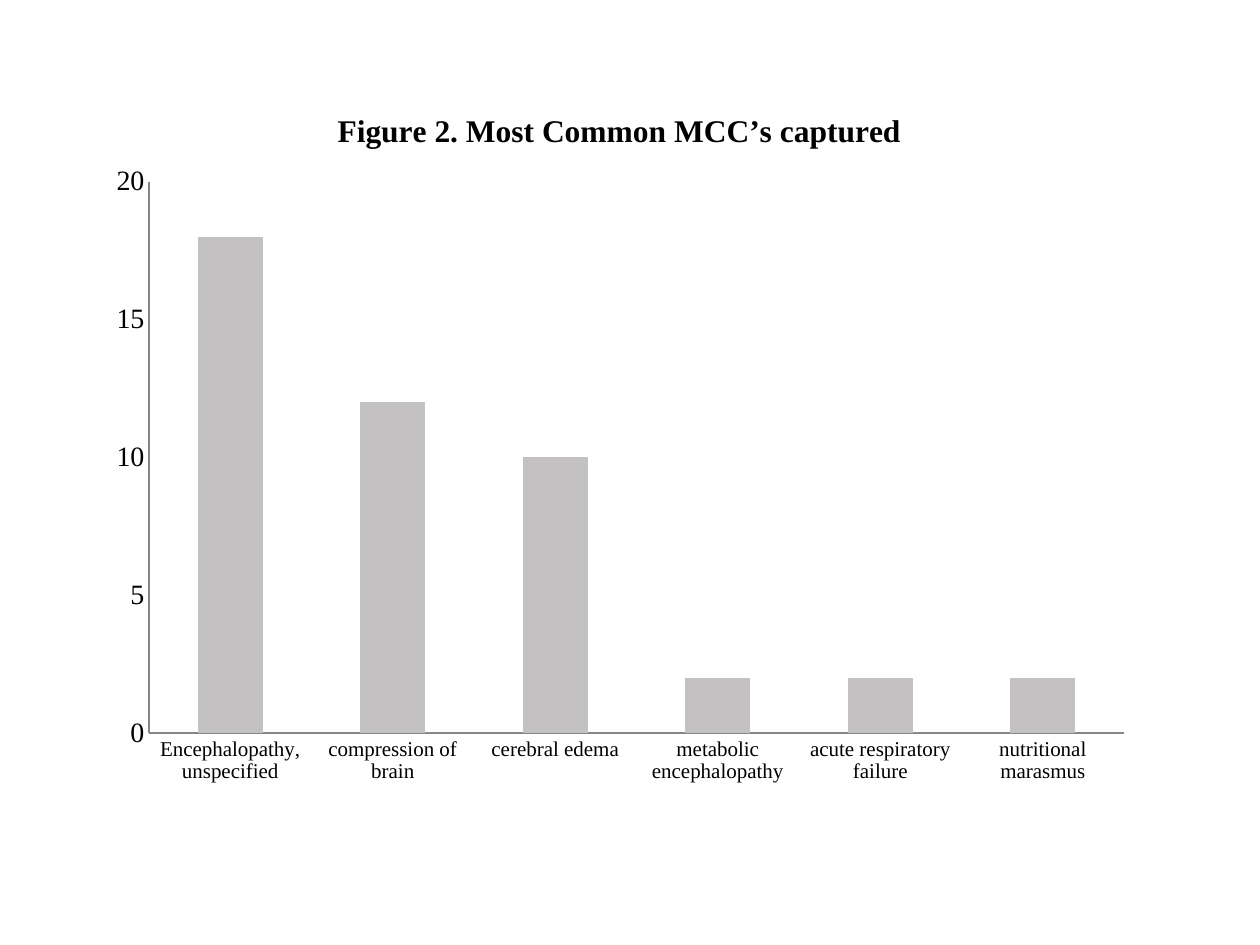
import pptx
import pptx.chart.data
import pptx.dml.color
import pptx.enum.chart
import pptx.oxml
import pptx.oxml.ns
import pptx.util

Inches, Pt = pptx.util.Inches, pptx.util.Pt
RGBColor = pptx.dml.color.RGBColor
enums = pptx.enum.chart

# Content
TITLE = "Figure 2. Most Common MCC’s captured"
COUNTS = {
    "Encephalopathy, unspecified": 18,
    "compression of brain": 12,
    "cerebral edema": 10,
    "metabolic encephalopathy": 2,
    "acute respiratory failure": 2,
    "nutritional marasmus": 2,
}
BLACK = RGBColor(0x00, 0x00, 0x00)
GREY = RGBColor(0xC3, 0xC1, 0xC1)
AXIS = RGBColor(0x86, 0x86, 0x86)
FONT = "Times New Roman"
LEFT, TOP, WIDTH, HEIGHT = 0.75, 0.67, 8.33, 5.67
PLOT = {"x": 1.18, "y": 1.44, "w": 7.74, "h": 4.38}  # inches on the slide


def style(font, size, name=FONT, bold=False):
    font.name, font.size, font.bold = name, Pt(size), bold
    font.color.rgb = BLACK


def place_plot(chart):
    """Fix the inner plot area as fractions of the chart frame."""
    parts = {
        "x": (PLOT["x"] - LEFT) / WIDTH,
        "y": (PLOT["y"] - TOP) / HEIGHT,
        "w": PLOT["w"] / WIDTH,
        "h": PLOT["h"] / HEIGHT,
    }
    tags = '<c:layoutTarget val="inner"/><c:xMode val="edge"/><c:yMode val="edge"/>'
    tags += "".join(f'<c:{key} val="{val:.3f}"/>' for key, val in parts.items())
    ns = pptx.oxml.ns.nsdecls("c")
    layout = pptx.oxml.parse_xml(
        f"<c:layout {ns}><c:manualLayout>{tags}</c:manualLayout></c:layout>")
    area = chart._chartSpace.chart.plotArea
    for old in area.findall(pptx.oxml.ns.qn("c:layout")):
        area.remove(old)
    area.insert(0, layout)


prs = pptx.Presentation()
prs.slide_width, prs.slide_height = Inches(10), Inches(7.5)
slide = prs.slides.add_slide(prs.slide_layouts[6])

# Column chart
data = pptx.chart.data.CategoryChartData()
data.categories = list(COUNTS)
data.add_series("Series 1", list(COUNTS.values()))
frame = slide.shapes.add_chart(
    enums.XL_CHART_TYPE.COLUMN_CLUSTERED,
    Inches(LEFT), Inches(TOP), Inches(WIDTH), Inches(HEIGHT), data)
chart = frame.chart
style(chart.font, 18, "TeX Gyre Bonum")
chart.has_legend = False
place_plot(chart)

# Title
chart.has_title = True
title = chart.chart_title
title.text_frame.text = TITLE
title.include_in_layout = False
style(title.text_frame.paragraphs[0].runs[0].font, 18, bold=True)

# Columns
plot = chart.plots[0]
plot.gap_width = 150
plot.vary_by_categories = False
fill = plot.series[0].format.fill
fill.solid()
fill.fore_color.rgb = GREY

# Axes
for axis, size in ((chart.category_axis, 12), (chart.value_axis, 16)):
    axis.has_major_gridlines = False
    axis.major_tick_mark = axis.minor_tick_mark = enums.XL_TICK_MARK.NONE
    axis.format.line.color.rgb = AXIS
    axis.format.line.width = Pt(0.75)
    style(axis.tick_labels.font, size)
scale = chart.value_axis
scale.minimum_scale, scale.maximum_scale, scale.major_unit = 0, 20, 5

prs.save("out.pptx")
